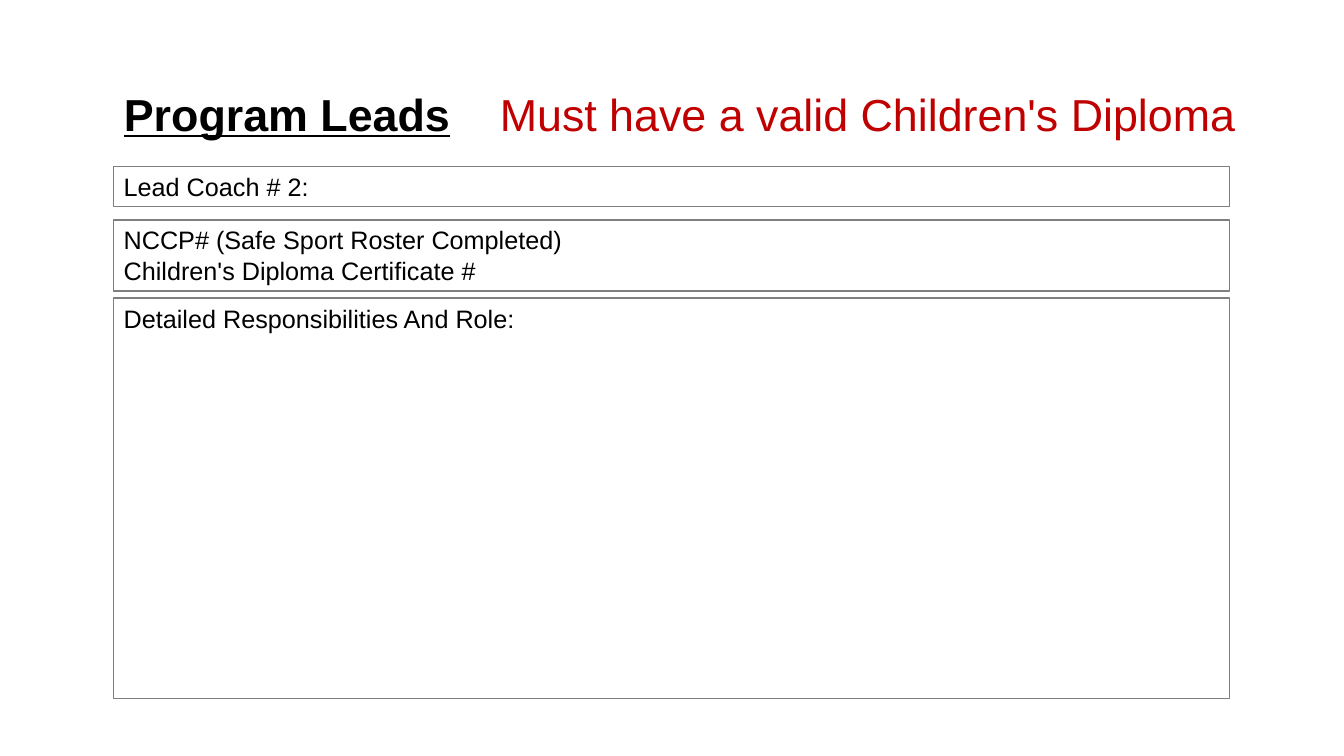
from lxml import etree
from pptx import Presentation
from pptx.dml.color import RGBColor
from pptx.enum import shapes, text
from pptx.oxml.ns import qn
from pptx.util import Pt

# Content
TITLE = [
    ("Program Leads", "black", {"bold": True, "underline": True}),
    ("\tMust have a valid Children's Diploma", "red", {"bold": False, "underline": False}),
]
FIELDS = [  # top, height, lines
    (118.8, 28.8, ["Lead Coach # 2:"]),
    (157, 51, ["NCCP# (Safe Sport Roster Completed)", "Children's Diploma Certificate #"]),
    (213, 286, ["Detailed Responsibilities And Role:"]),
]
COLORS = {"black": "000000", "red": "C00000", "white": "FFFFFF", "grey": "7F7F7F"}
LEFT, FIELD_WIDTH = 81.3, 797
TITLE_TAB = 268.5
FRAME = {"margin_left": Pt(7.2), "margin_right": Pt(7.2), "margin_top": Pt(3.6),
         "margin_bottom": Pt(3.6), "word_wrap": True}


def color(name):
    return RGBColor.from_string(COLORS[name])


def apply(target, values):
    for name, value in values.items():
        setattr(target, name, value)


def add_run(p, words, size, color_name, **style):
    r = p.add_run()
    r.text = words
    apply(r.font, {"name": "Arial", "size": Pt(size), **style})
    r.font.color.rgb = color(color_name)


prs = Presentation()
prs.slide_width, prs.slide_height = Pt(960), Pt(540)
s = prs.slides.add_slide(prs.slide_layouts[5])

# Title, with a tab stop between its two parts
title = s.shapes.title
apply(title, {"left": Pt(LEFT), "top": Pt(48.2), "width": Pt(850.3), "height": Pt(70.6)})
tf = title.text_frame
apply(tf, {**FRAME, "vertical_anchor": text.MSO_ANCHOR.MIDDLE,
           "auto_size": text.MSO_AUTO_SIZE.NONE})
p = tf.paragraphs[0]
apply(p, {"alignment": text.PP_ALIGN.LEFT, "line_spacing": 0.9})
tabs = etree.SubElement(p._p.get_or_add_pPr(), qn("a:tabLst"))
etree.SubElement(tabs, qn("a:tab"), pos=str(Pt(TITLE_TAB)), algn="l")
for words, color_name, style in TITLE:
    add_run(p, words, 32, color_name, **style)

# Form fields
for top, height, lines in FIELDS:
    sp = s.shapes.add_shape(shapes.MSO_SHAPE.RECTANGLE,
                            Pt(LEFT), Pt(top), Pt(FIELD_WIDTH), Pt(height))
    sp.shadow.inherit = False
    sp.fill.solid()
    sp.fill.fore_color.rgb = color("white")
    sp.line.color.rgb = color("grey")
    sp.line.width = Pt(1)
    tf = sp.text_frame
    apply(tf, {**FRAME, "vertical_anchor": text.MSO_ANCHOR.TOP})
    for i, line in enumerate(lines):
        p = tf.add_paragraph() if i else tf.paragraphs[0]
        p.alignment = text.PP_ALIGN.LEFT
        add_run(p, line, 18, "black")

prs.save("out.pptx")
